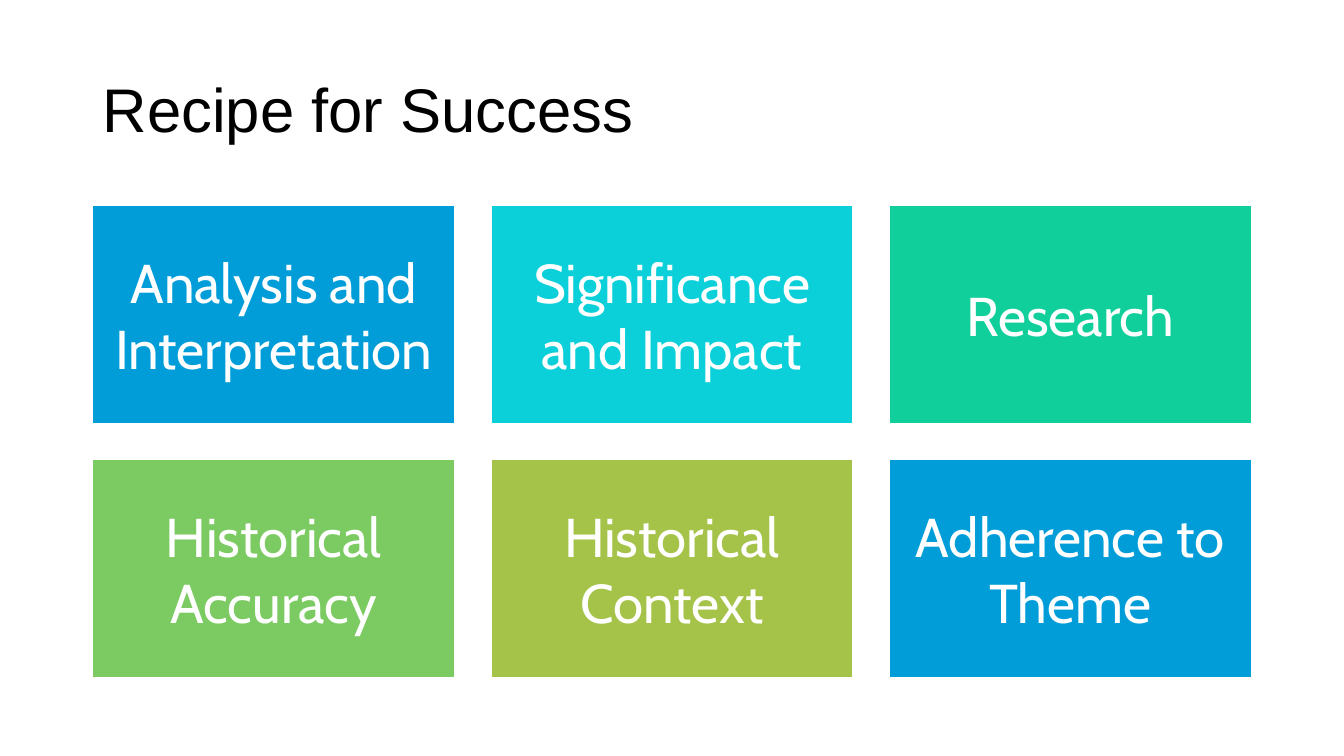
from dataclasses import dataclass

from pptx import Presentation
from pptx.dml.color import RGBColor
from pptx.enum.shapes import MSO_SHAPE as Shape
from pptx.enum.text import MSO_ANCHOR as Anchor, PP_ALIGN as Align
from pptx.util import Inches, Pt


@dataclass(frozen=True)
class Theme:
    white: str = "FFFFFF"
    black: str = "000000"
    blue: str = "009DD9"
    cyan: str = "0BD0D9"
    teal: str = "10CF9B"
    green: str = "7CCA62"
    olive: str = "A5C249"
    title_font: str = "Arial"
    tile_font: str = "Cabin"
    title_size: int = 44
    tile_size: int = 39


theme = Theme()


def write_text(shape, text, *, font, size, color, align=Align.LEFT,
               line_spacing=1.0, margins=(0.1, 0.05)):
    frame = shape.text_frame
    frame.word_wrap = True
    frame.vertical_anchor = Anchor.MIDDLE
    frame.margin_left = frame.margin_right = Inches(margins[0])
    frame.margin_top = frame.margin_bottom = Inches(margins[1])
    paragraph = frame.paragraphs[0]
    paragraph.alignment = align
    paragraph.line_spacing = line_spacing
    run = paragraph.add_run()
    run.text = text
    run.font.name = font
    run.font.size = Pt(size)
    run.font.color.rgb = RGBColor.from_string(color)


presentation = Presentation()
presentation.slide_width = Inches(13.33)
presentation.slide_height = Inches(7.5)
slide = presentation.slides.add_slide(presentation.slide_layouts[6])

# Grid: three columns with equal gaps across and down
columns = 3
left, top = 0.92, 2.04
tile_width, tile_height = 3.59, 2.16
gap = 0.36

# Title
title = slide.shapes.add_textbox(Inches(left), Inches(0.39), Inches(11.5), Inches(1.45))
write_text(title, "Recipe for Success", font=theme.title_font,
           size=theme.title_size, color=theme.black, line_spacing=0.9)

# Tiles
tiles = [
    ("Analysis and Interpretation", theme.blue),
    ("Significance and Impact", theme.cyan),
    ("Research", theme.teal),
    ("Historical Accuracy", theme.green),
    ("Historical Context", theme.olive),
    ("Adherence to Theme", theme.blue),
]
for index, (label, color) in enumerate(tiles):
    row, column = divmod(index, columns)
    tile = slide.shapes.add_shape(
        Shape.RECTANGLE,
        Inches(left + column * (tile_width + gap)),
        Inches(top + row * (tile_height + gap)),
        Inches(tile_width), Inches(tile_height))
    tile.shadow.inherit = False
    tile.fill.solid()
    tile.fill.fore_color.rgb = RGBColor.from_string(color)
    tile.line.color.rgb = RGBColor.from_string(theme.white)
    tile.line.width = Pt(1)
    write_text(tile, label, font=theme.tile_font, size=theme.tile_size,
               color=theme.white, align=Align.CENTER, margins=(0.16, 0.16))

presentation.save("out.pptx")
